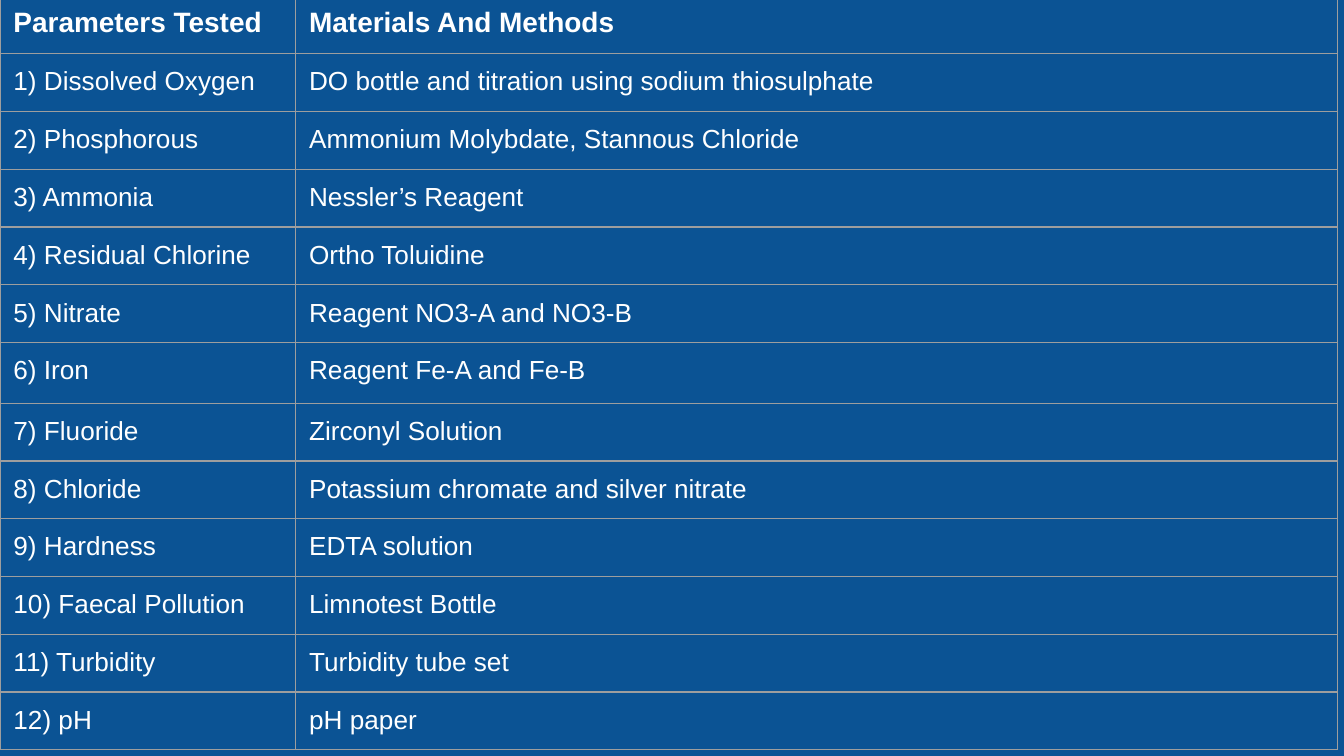
from typing import NamedTuple

from lxml.etree import SubElement
from pptx import Presentation
from pptx.dml.color import RGBColor
from pptx.oxml.ns import qn
from pptx.table import _Cell
from pptx.util import Inches, Pt

BLUE = RGBColor(0x0B, 0x53, 0x94)
WHITE = RGBColor(0xFF, 0xFF, 0xFF)
GREY = RGBColor(0x9E, 0x9E, 0x9E)


class Test(NamedTuple):
    name: str
    method: str


HEAD = Test("Parameters Tested", "Materials And Methods")
TESTS = [
    Test("Dissolved Oxygen", "DO bottle and titration using sodium thiosulphate"),
    Test("Phosphorous", "Ammonium Molybdate, Stannous Chloride"),
    Test("Ammonia", "Nessler’s Reagent"),
    Test("Residual Chlorine", "Ortho Toluidine"),
    Test("Nitrate", "Reagent NO3-A and NO3-B"),
    Test("Iron", "Reagent Fe-A and Fe-B"),
    Test("Fluoride", "Zirconyl Solution"),
    Test("Chloride", "Potassium chromate and silver nitrate"),
    Test("Hardness", "EDTA solution"),
    Test("Faecal Pollution", "Limnotest Bottle"),
    Test("Turbidity", "Turbidity tube set"),
    Test("pH", "pH paper"),
]
WIDTHS = [2.2, 7.75]
ROW, TALL = 0.43, 0.45
TALL_ROWS = {0, 6}


def write(cell: _Cell, text: str, *, size: float = 14, bold: bool = False) -> None:
    para = cell.text_frame.paragraphs[0]
    run = para.add_run()
    run.text = text
    font = run.font
    font.name, font.size, font.bold = "Arial", Pt(size), bold
    font.color.rgb = WHITE


def style(cell: _Cell) -> None:
    """Set the insets, the grey rules and an empty fill."""
    cell.margin_left = cell.margin_right = Inches(0.1)
    cell.margin_top = cell.margin_bottom = Inches(0.1)
    props = cell._tc.get_or_add_tcPr()
    for side in ("L", "R", "T", "B"):
        line = SubElement(props, qn(f"a:ln{side}"), w=str(Pt(0.75)))
        fill = SubElement(line, qn("a:solidFill"))
        SubElement(fill, qn("a:srgbClr"), val=str(GREY))
    cell.fill.background()


def main() -> None:
    deck = Presentation()
    deck.slide_width = Inches(10)
    deck.slide_height = Inches(10 * 9 / 16)
    slide = deck.slides.add_slide(deck.slide_layouts[6])
    slide.background.fill.solid()
    slide.background.fill.fore_color.rgb = BLUE

    rows = [HEAD] + [
        Test(f"{num}) {test.name}", test.method) for num, test in enumerate(TESTS, 1)
    ]
    frame = slide.shapes.add_table(
        len(rows), len(WIDTHS), 0, Inches(-0.05), Inches(sum(WIDTHS)), Inches(5.66)
    )
    table = frame.table
    table.horz_banding = False
    for col, width in zip(table.columns, WIDTHS):
        col.width = Inches(width)
    for r, test in enumerate(rows):
        table.rows[r].height = Inches(TALL if r in TALL_ROWS else ROW)
        for c, text in enumerate(test):
            cell = table.cell(r, c)
            style(cell)
            write(cell, text, size=14 if r else 15, bold=r == 0)

    deck.save("out.pptx")


if __name__ == "__main__":
    main()
